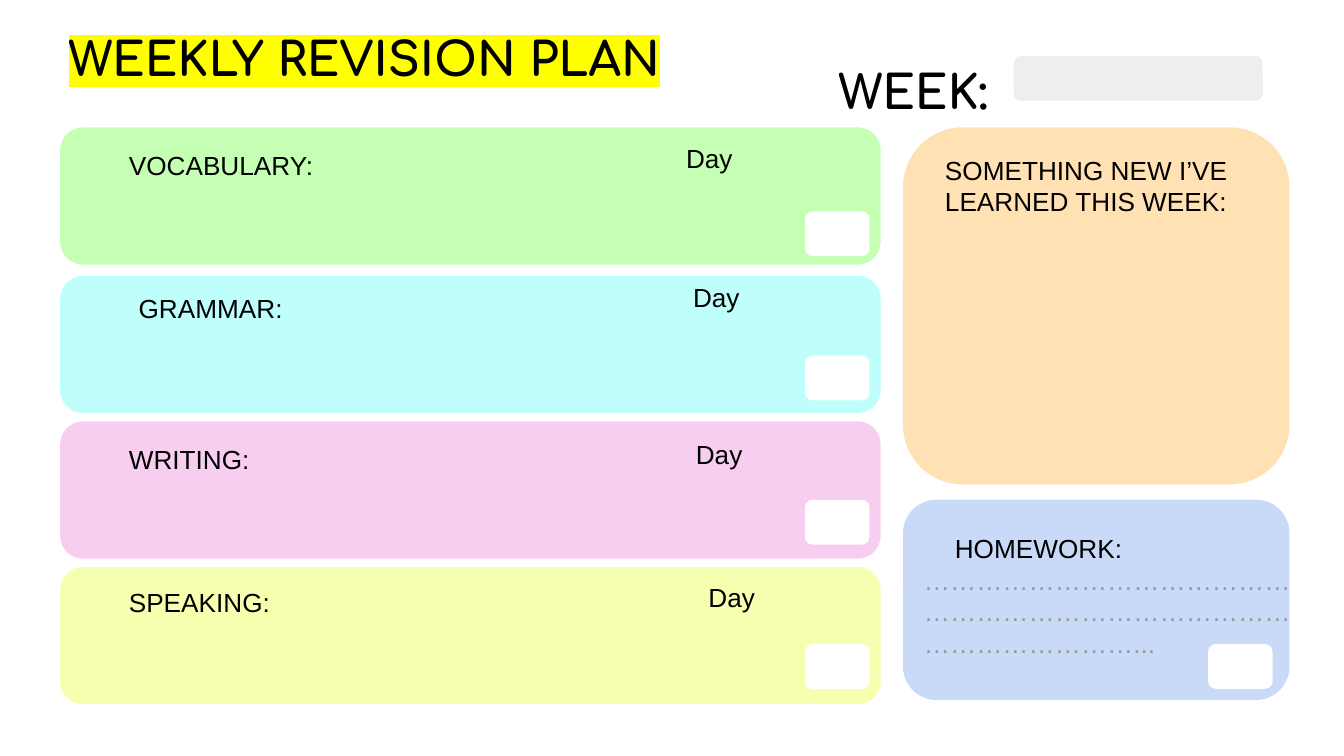
import pptx
import pptx.dml.color
import pptx.enum.shapes
import pptx.enum.text
import pptx.oxml
import pptx.oxml.ns
import pptx.util

PX = 9525  # 96 px to the inch
COLORS = {
    "ink": "000000", "dots": "999999", "highlight": "FFFF00",
    "week": "EEEEEE", "checkbox": "FFFFFF",
    "vocabulary": "C4FFB4", "grammar": "BFFFFB",
    "writing": "F8CEF0", "speaking": "F6FFAF",
    "learned": "FFE1B3", "homework": "C9DAF8",
}
CHECK_TOP, CHECK_STEP = 151, 103

deck = pptx.Presentation()
deck.slide_width = 960 * PX
deck.slide_height = 540 * PX
slide = deck.slides.add_slide(deck.slide_layouts[6])


def add_panel(left, top, width, height, color):
    panel = slide.shapes.add_shape(
        pptx.enum.shapes.MSO_SHAPE.ROUNDED_RECTANGLE,
        left * PX, top * PX, width * PX, height * PX)
    panel.shadow.inherit = False
    panel.fill.solid()
    panel.fill.fore_color.rgb = pptx.dml.color.RGBColor.from_string(COLORS[color])
    panel.line.fill.background()


def add_text(text, left, top, width, height, size=14, font="Arial",
             bold=False, color="ink", highlight=None):
    box = slide.shapes.add_textbox(left * PX, top * PX, width * PX, height * PX)
    frame = box.text_frame
    frame.word_wrap = True
    frame.vertical_anchor = pptx.enum.text.MSO_ANCHOR.TOP
    frame.margin_left = frame.margin_right = 10 * PX
    frame.margin_top = frame.margin_bottom = 10 * PX
    run = frame.paragraphs[0].add_run()
    run.text = text
    run.font.size = pptx.util.Pt(size)
    run.font.name = font
    run.font.bold = bold
    run.font.color.rgb = pptx.dml.color.RGBColor.from_string(COLORS[color])
    if highlight:
        mark = pptx.oxml.parse_xml(
            f'<a:highlight {pptx.oxml.ns.nsdecls("a")}>'
            f'<a:srgbClr val="{COLORS[highlight]}"/></a:highlight>')
        run._r.rPr.find(pptx.oxml.ns.qn("a:solidFill")).addnext(mark)


# Header
add_text("WEEKLY REVISION PLAN", 39, 11, 575, 80, size=25, font="Comfortaa",
         bold=True, highlight="highlight")
add_text("WEEK:", 589, 35, 133, 41, size=25, font="Comfortaa", bold=True)
add_panel(724, 40, 178, 32, "week")

# Skills: name, panel top, label left and top, day left and top
skills = [
    ("vocabulary", 91, 82, 97, 480, 92),
    ("grammar", 197, 89, 199, 485, 191),
    ("writing", 301, 82, 307, 487, 303),
    ("speaking", 405, 82, 409, 496, 405),
]
for row, (skill, top, label_left, label_top, day_left, day_top) in enumerate(skills):
    add_panel(43, top, 586, 98, skill)
    add_panel(575, CHECK_TOP + row * CHECK_STEP, 46, 32, "checkbox")
    add_text(f"{skill.upper()}:", label_left, label_top, 155, 30)
    add_text("Day", day_left, day_top, 112, 42)

# Something new
add_panel(645, 91, 276, 255, "learned")
add_text("SOMETHING NEW I’VE LEARNED THIS WEEK:", 665, 100, 236, 30)

# Homework
add_panel(645, 357, 276, 143, "homework")
add_text("HOMEWORK:", 672, 370, 155, 30)
add_panel(863, CHECK_TOP + 3 * CHECK_STEP, 46, 32, "checkbox")
add_text("…" * 36 + "...", 650, 393, 297, 54, color="dots")

deck.save("out.pptx")
